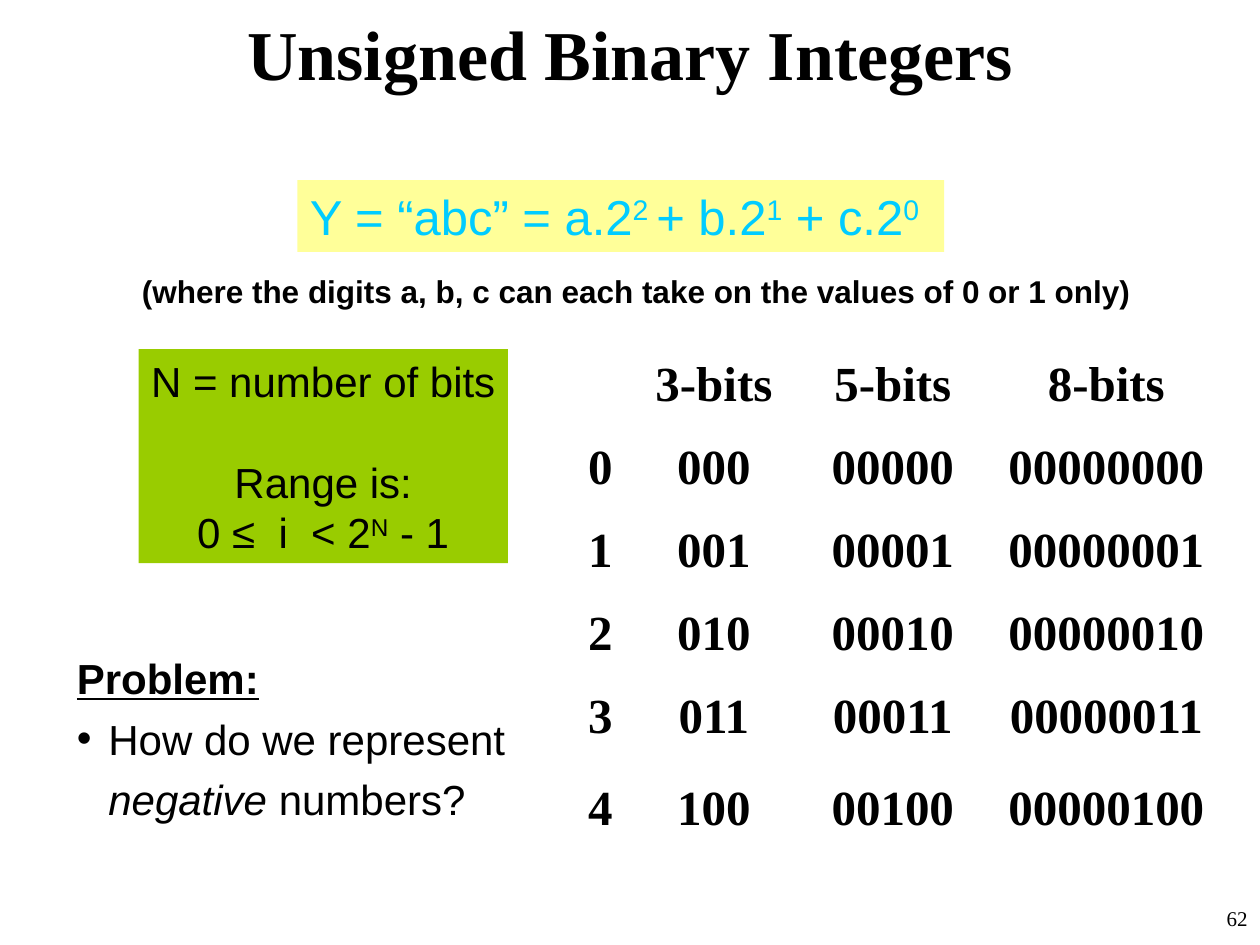
from lxml.etree import SubElement
from pptx import Presentation
from pptx.dml.color import RGBColor
from pptx.enum.shapes import MSO_SHAPE
from pptx.enum.text import MSO_ANCHOR, MSO_AUTO_SIZE, PP_ALIGN
from pptx.oxml.ns import qn
from pptx.util import Pt

COLORS = {"text": "000000", "formula": "00CCFF", "formula_fill": "FFFF99", "range_fill": "99CC00"}
SERIF = "Times New Roman"
SANS = "Arial"


def place(shape, left, top, width, height):
    shape.left, shape.top = Pt(left), Pt(top)
    shape.width, shape.height = Pt(width), Pt(height)


def format_run(run, font_name, size, color="text", bold=False, italic=False, underline=False, superscript=False):
    font = run.font
    font.name, font.size = font_name, Pt(size)
    font.bold, font.italic, font.underline = bold, italic, underline
    font.color.rgb = RGBColor.from_string(COLORS[color])
    if superscript:
        run._r.get_or_add_rPr().set("baseline", "30000")


def write_text(paragraph, text, font_name, size, alignment=PP_ALIGN.LEFT, **style):
    paragraph.text = text
    paragraph.alignment = alignment
    format_run(paragraph.runs[0], font_name, size, **style)


def write_runs(paragraph, pieces, font_name, size, alignment=PP_ALIGN.LEFT, color="text"):
    paragraph.alignment = alignment
    for text, style in pieces:
        run = paragraph.add_run()
        run.text = text
        format_run(run, font_name, size, color, **style)


def add_label(slide, bounds, text, font_name, size, alignment, bold=False):
    label = slide.shapes.add_textbox(*map(Pt, bounds))
    label.text_frame.word_wrap = True
    write_text(label.text_frame.paragraphs[0], text, font_name, size, alignment, bold=bold)


def add_panel(slide, bounds, fill):
    panel = slide.shapes.add_shape(MSO_SHAPE.RECTANGLE, *map(Pt, bounds))
    panel.shadow.inherit = False
    panel.fill.solid()
    panel.fill.fore_color.rgb = RGBColor.from_string(COLORS[fill])
    panel.line.fill.background()
    panel.text_frame.word_wrap = False
    panel.text_frame.auto_size = MSO_AUTO_SIZE.SHAPE_TO_FIT_TEXT
    return panel.text_frame


def add_title(slide):
    title = slide.shapes.title
    place(title, 0, 0, 720, 60.5)
    title.text_frame.vertical_anchor = MSO_ANCHOR.MIDDLE
    write_text(title.text_frame.paragraphs[0], "Unsigned Binary Integers", SERIF, 40, PP_ALIGN.CENTER, bold=True)


def add_formula(slide):
    frame = add_panel(slide, (170, 103, 369.5, 41), "formula_fill")
    raised = {"superscript": True}
    pieces = [("Y = “abc” = a.2", {}), ("2 ", raised), ("+ b.2", {}), ("1", raised), (" + c.2", {}), ("0", raised)]
    write_runs(frame.paragraphs[0], pieces, SANS, 28, color="formula")


def add_range(slide):
    frame = add_panel(slide, (79.2, 199.5, 211, 122.4), "range_fill")
    write_text(frame.paragraphs[0], "N = number of bits", SANS, 24, PP_ALIGN.CENTER)
    heading = frame.add_paragraph()
    write_text(heading, "Range is:", SANS, 24, PP_ALIGN.CENTER)
    heading.space_before = Pt(29)
    pieces = [("0 ≤  i  < 2", {}), ("N", {"superscript": True}), (" - 1", {})]
    write_runs(frame.add_paragraph(), pieces, SANS, 24, PP_ALIGN.CENTER)


def add_bits_table(slide):
    widths = (48.2, 101.5, 103, 141.1)
    heights = (47.5, 47.5, 47.5, 47.5, 52.6, 47.5)
    bit_counts = (3, 5, 8)
    rows = [[""] + [f"{bits}-bits" for bits in bit_counts]]
    rows += [[str(number)] + [f"{number:0{bits}b}" for bits in bit_counts] for number in range(5)]
    frame = slide.shapes.add_table(len(rows), len(widths), Pt(309), Pt(194.4), Pt(sum(widths)), Pt(sum(heights)))
    table = frame.table
    table.first_row = table.horz_banding = False
    for column, width in zip(table.columns, widths):
        column.width = Pt(width)
    for row, height, texts in zip(table.rows, heights, rows):
        row.height = Pt(height)
        for index, (cell, text) in enumerate(zip(row.cells, texts)):
            cell.fill.background()
            if text:
                paragraph = cell.text_frame.paragraphs[0]
                alignment = PP_ALIGN.CENTER if index else PP_ALIGN.RIGHT
                write_text(paragraph, text, SERIF, 28, alignment, bold=True)
                paragraph.line_spacing = 1.2


def set_bullet(paragraph, character=None):
    properties = paragraph._p.get_or_add_pPr()
    properties.set("marL", str(Pt(18)))
    properties.set("indent", str(Pt(-18)))
    if character:
        SubElement(properties, qn("a:buChar")).set("char", character)
    else:
        SubElement(properties, qn("a:buNone"))


def add_problem(slide):
    body = slide.placeholders[1]
    place(body, 36.7, 363.6, 324.7, 110.9)
    frame = body.text_frame
    frame.vertical_anchor = MSO_ANCHOR.MIDDLE
    frame.auto_size = MSO_AUTO_SIZE.NONE
    heading, question = frame.paragraphs[0], frame.add_paragraph()
    write_text(heading, "Problem:", SANS, 24, bold=True, underline=True)
    pieces = [("How do we represent ", {}), ("negative", {"italic": True}), (" numbers?", {})]
    write_runs(question, pieces, SANS, 24)
    for paragraph, bullet in ((heading, None), (question, "•")):
        paragraph.line_spacing = 1.2
        paragraph.space_before = Pt(0)
        set_bullet(paragraph, bullet)


def main():
    presentation = Presentation()
    presentation.slide_width, presentation.slide_height = Pt(720), Pt(540)
    slide = presentation.slides.add_slide(presentation.slide_layouts[1])
    add_title(slide)
    add_bits_table(slide)
    add_formula(slide)
    add_range(slide)
    condition = "(where the digits a, b, c can each take on the values of 0 or 1 only)"
    add_label(slide, (63.4, 152, 600.5, 29), condition, SANS, 18, PP_ALIGN.CENTER, bold=True)
    add_problem(slide)
    add_label(slide, (570, 514, 150, 26), "62", SERIF, 12, PP_ALIGN.RIGHT)
    presentation.save("out.pptx")


if __name__ == "__main__":
    main()
